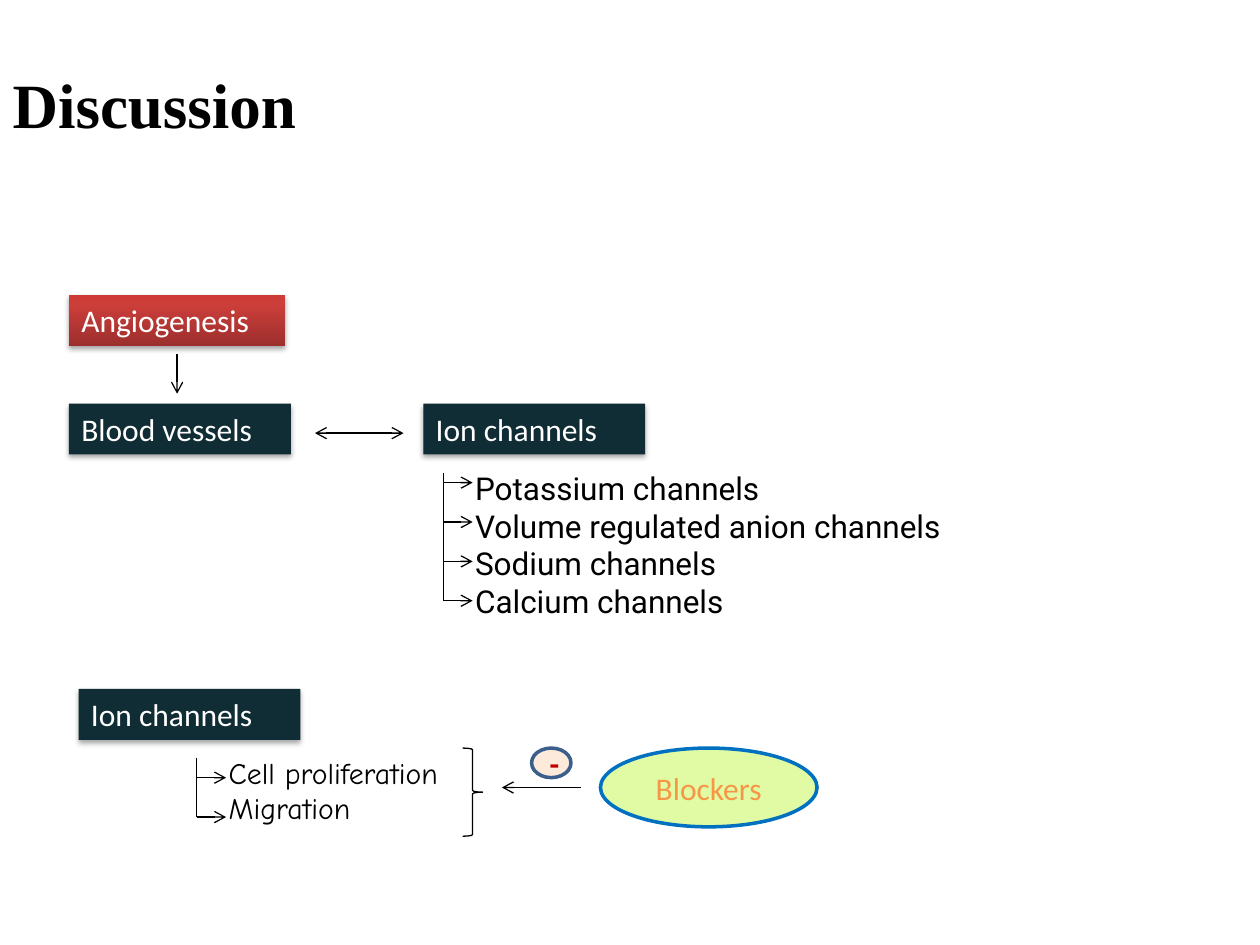
from copy import deepcopy

from lxml import etree
from pptx import Presentation
from pptx.dml.color import RGBColor
from pptx.enum import shapes, text
from pptx.oxml import parse_xml
from pptx.oxml.ns import qn
from pptx.util import Pt

COLORS = {
    "black": "000000", "white": "FFFFFF", "navy": "102C34",
    "red_dark": "9C2F2D", "red_mid": "CB3E3A", "red_light": "CE3B37",
    "lime": "E0FBA3", "blue": "0070C0", "orange": "F79646",
    "peach": "FDEADA", "steel": "3A5F8C", "crimson": "C00000",
}
RGB = {name: RGBColor.from_string(value) for name, value in COLORS.items()}
SHADOW = (
    '<a:effectLst xmlns:a="http://schemas.openxmlformats.org/drawingml/2006/main">'
    '<a:outerShdw blurRad="39400" dist="22900" dir="5400000" rotWithShape="0">'
    f'<a:srgbClr val="{COLORS["black"]}"><a:alpha val="35000"/></a:srgbClr>'
    "</a:outerShdw></a:effectLst>"
)


def write(sp, lines, font, size, color, bold=False, align=text.PP_ALIGN.LEFT,
          anchor=text.MSO_ANCHOR.TOP, wrap=True):
    tf = sp.text_frame
    tf.word_wrap = wrap
    tf.vertical_anchor = anchor
    for i, line in enumerate(lines):
        p = tf.add_paragraph() if i else tf.paragraphs[0]
        p.alignment = align
        r = p.add_run()
        r.text = line
        r.font.name, r.font.size, r.font.bold = font, Pt(size), bold
        r.font.color.rgb = RGB[color]


def add_line(x1, y1, x2, y2, *ends):
    c = s.shapes.add_connector(shapes.MSO_CONNECTOR.STRAIGHT,
                               Pt(x1), Pt(y1), Pt(x2), Pt(y2))
    c.line.color.rgb = RGB["black"]
    c.line.width = Pt(0.75)
    for end in ends:
        etree.SubElement(c.line._get_or_add_ln(), qn(f"a:{end}"), type="arrow")
    etree.SubElement(c._element.spPr, qn("a:effectLst"))


prs = Presentation()
prs.slide_width, prs.slide_height = Pt(720), Pt(540)
s = prs.slides.add_slide(prs.slide_layouts[5])

# Title
title = s.shapes.title
title.left, title.top, title.width, title.height = Pt(0), Pt(34), Pt(584.6), Pt(51)
write(title, ["Discussion"], "Times New Roman", 36, "black", bold=True)

# Label boxes with a soft shadow
for label, x, y, w, wrap in [
    ("Angiogenesis", 39.4, 168.6, 123.6, False),
    ("Blood vessels", 39.4, 230.6, 126.8, False),
    ("Ion channels", 241.9, 230.6, 126.8, True),
    ("Ion channels", 44.9, 393.7, 126.8, True),
]:
    sp = s.shapes.add_shape(shapes.MSO_SHAPE.RECTANGLE, Pt(x), Pt(y), Pt(w), Pt(29.1))
    sp.line.fill.background()
    if label == "Angiogenesis":
        sp.fill.gradient()
        sp.fill.gradient_angle = 90
        stops = sp._element.spPr.find(".//" + qn("a:gsLst"))
        stops.append(deepcopy(stops[-1]))
        for stop, position, color in zip(sp.fill.gradient_stops, (0, 0.8, 1),
                                         ("red_dark", "red_mid", "red_light")):
            stop.position = position
            stop.color.rgb = RGB[color]
    else:
        sp.fill.solid()
        sp.fill.fore_color.rgb = RGB["navy"]
    sp._element.spPr.append(parse_xml(SHADOW))
    write(sp, [label], "Calibri", 18, "white", wrap=wrap)

# Lists of channels and of effects
for lines, x, y, w, h, font, size, align in [
    (["Potassium channels", "Volume regulated anion channels",
      "Sodium channels", "Calcium channels"],
     264.4, 264.4, 309.6, 94.5, "Roboto", 18, text.PP_ALIGN.JUSTIFY),
    (["Cell proliferation", "Migration"],
     123.6, 427.5, 360, 48, "Comic Neue", 17, text.PP_ALIGN.LEFT),
]:
    sp = s.shapes.add_textbox(Pt(x), Pt(y), Pt(w), Pt(h))
    write(sp, lines, font, size, "black", align=align)

# Branching arrows: a trunk and evenly spaced branches
for x, top, first, count in [(253.3, 270, 275.8, 4), (112.4, 433.1, 444.4, 2)]:
    branches = [first + 22.5 * i for i in range(count)]
    add_line(x, top, x, branches[-1])
    for y in branches:
        add_line(x, y, x + 16.8, y, "tailEnd")

# Arrows between the parts
add_line(101.2, 202.4, 101.2, 225, "tailEnd")
add_line(180, 247.5, 230.6, 247.5, "headEnd", "tailEnd")
add_line(331.9, 450, 286.8, 450, "tailEnd")

# Brace around the effects
brace = s.shapes.add_shape(shapes.MSO_SHAPE.RIGHT_BRACE,
                           Pt(264.4), Pt(427.5), Pt(11.4), Pt(50.4))
brace.shadow.inherit = False
brace.fill.background()
brace.line.color.rgb = RGB["black"]
brace.line.width = Pt(0.75)

# Blockers and their inhibiting sign
for label, x, w, h, fill, line, color, bold in [
    ("Blockers", 343.1, 123.8, 45, "lime", "blue", "orange", False),
    ("-", 303.8, 22.5, 16.9, "peach", "steel", "crimson", True),
]:
    sp = s.shapes.add_shape(shapes.MSO_SHAPE.OVAL, Pt(x), Pt(427.5), Pt(w), Pt(h))
    sp.shadow.inherit = False
    sp.fill.solid()
    sp.fill.fore_color.rgb = RGB[fill]
    sp.line.color.rgb = RGB[line]
    sp.line.width = Pt(2)
    write(sp, [label], "Calibri", 18, color, bold, text.PP_ALIGN.CENTER,
          text.MSO_ANCHOR.MIDDLE)

prs.save("out.pptx")
